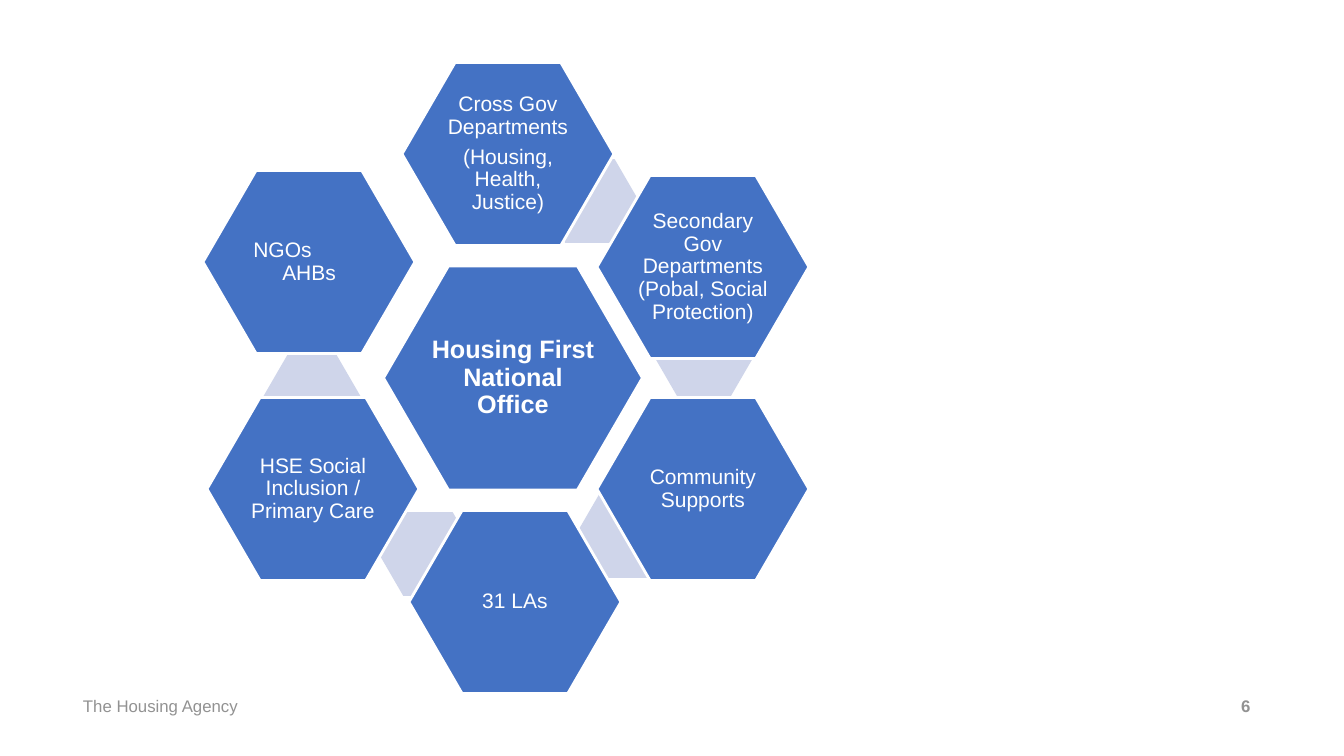
from pptx import Presentation
from pptx.dml.color import RGBColor
from pptx.enum.shapes import MSO_SHAPE
from pptx.enum.text import MSO_ANCHOR, PP_ALIGN
from pptx.util import Pt

# Content: centres and sizes in px
SLIDE = (1344, 756)
SCALE = 12192000 / SLIDE[0]
BLUE, PALE, WHITE, GREY = "4472C4", "CFD5EA", "FFFFFF", "929292"

HUB_SIZE, PARTNER_SIZE, LINK_SIZE = (259, 224), (212, 183), (98, 84)
HUB = ("Housing First National Office", (513, 378))
PARTNERS = [
    (["Cross Gov Departments", "(Housing, Health, Justice)"], (508, 154)),
    (["Secondary Gov Departments (Pobal, Social Protection)"], (703, 267)),
    (["Community Supports"], (703, 489)),
    (["HSE Social Inclusion / Primary Care"], (313, 489)),
    (["31 LAs"], (515, 602)),
]
STAGGERED = (["NGOs", "AHBs"], (309, 262))
STAGGERED_INDENTS = [13, 42]
LINKS = [(590, 201), (704, 358), (624, 536), (428, 554), (312, 397)]
FOOTERS = [("The Housing Agency", (80, 693, 162, 26), False),
           ("6", (1238, 693, 26, 26), True)]


def px(length):
    return round(length * SCALE)


def rgb(value):
    return RGBColor.from_string(value)


def write(shape, lines, size=15, color=WHITE, bold=False, inset=2, wrap=True,
          align=PP_ALIGN.CENTER, spacing=0.9, gap=5, indents=()):
    frame = shape.text_frame
    frame.word_wrap = wrap
    frame.vertical_anchor = MSO_ANCHOR.MIDDLE
    frame.margin_left = frame.margin_right = px(inset)
    frame.margin_top = frame.margin_bottom = px(inset)
    for i, line in enumerate(lines):
        paragraph = frame.paragraphs[0] if i == 0 else frame.add_paragraph()
        paragraph.alignment = align
        paragraph.line_spacing = spacing
        paragraph.space_before = Pt(gap if i else 0)
        if indents:
            paragraph._p.get_or_add_pPr().set("marL", str(px(indents[i])))
        run = paragraph.add_run()
        run.text = line
        run.font.name = "Arial"
        run.font.size = Pt(size)
        run.font.bold = bold
        run.font.color.rgb = rgb(color)


def hexagon(slide, centre, size, fill, outlined=True):
    (x, y), (width, height) = centre, size
    shape = slide.shapes.add_shape(
        MSO_SHAPE.HEXAGON, px(x - width / 2), px(y - height / 2), px(width), px(height))
    shape.adjustments[0] = 0.29
    shape.shadow.inherit = False
    shape.fill.solid()
    shape.fill.fore_color.rgb = rgb(fill)
    if outlined:
        shape.line.color.rgb = rgb(WHITE)
        shape.line.width = Pt(2)
    else:
        shape.line.fill.background()
    return shape


def main():
    deck = Presentation()
    deck.slide_width, deck.slide_height = (px(side) for side in SLIDE)
    slide = deck.slides.add_slide(deck.slide_layouts[6])

    # Footer and slide number
    for label, box, bold in FOOTERS:
        footer = slide.shapes.add_textbox(*(px(side) for side in box))
        write(footer, [label], size=12, color=GREY, bold=bold, inset=3,
              wrap=False, align=PP_ALIGN.LEFT, spacing=1.0)

    # Pale links behind the hexagons
    for centre in LINKS:
        hexagon(slide, centre, LINK_SIZE, PALE, outlined=False)

    # Central office
    title, centre = HUB
    write(hexagon(slide, centre, HUB_SIZE, BLUE), [title], size=18, bold=True, inset=3)

    # Partners around it
    for lines, centre in PARTNERS:
        write(hexagon(slide, centre, PARTNER_SIZE, BLUE), lines)
    lines, centre = STAGGERED
    write(hexagon(slide, centre, PARTNER_SIZE, BLUE), lines, align=PP_ALIGN.LEFT,
          gap=0, indents=STAGGERED_INDENTS)

    deck.save("out.pptx")


if __name__ == "__main__":
    main()
